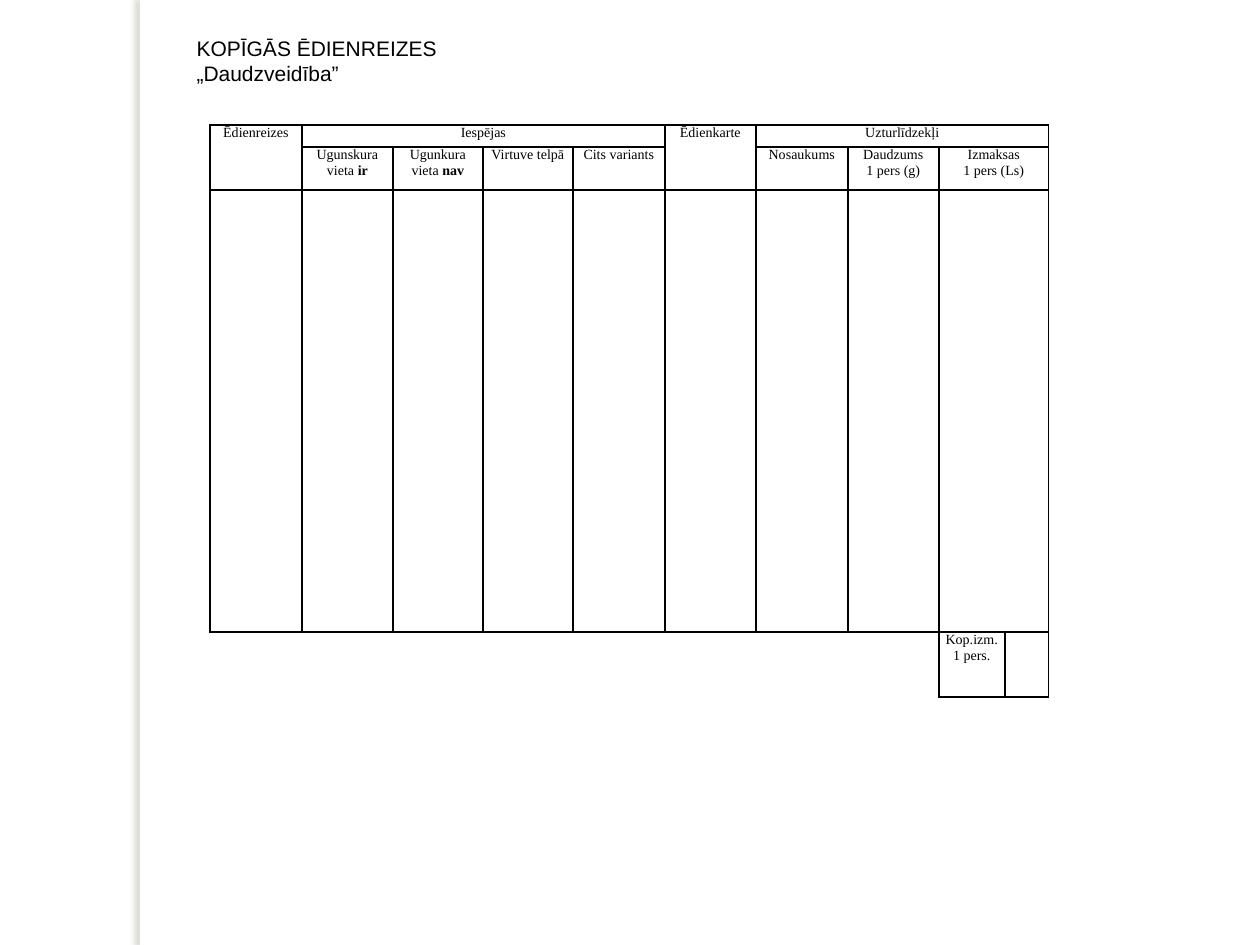
from itertools import product

from lxml import etree
from pptx import Presentation
from pptx.dml.color import RGBColor
from pptx.enum.shapes import MSO_SHAPE
from pptx.enum.text import MSO_ANCHOR, MSO_AUTO_SIZE, PP_ALIGN
from pptx.oxml.ns import qn
from pptx.util import Emu, Pt

RECTANGLE = MSO_SHAPE.RECTANGLE
TOP, NO_FIT = MSO_ANCHOR.TOP, MSO_AUTO_SIZE.NONE
LEFT, CENTER = PP_ALIGN.LEFT, PP_ALIGN.CENTER

PX = 914400 // 126
SLIDE = (1260, 945)
TITLE_AT = (184, 29, 753, 62)
STRIP_AT = (140, 0, 10, 945)
TABLE_AT = (210, 125)
COLUMNS = (92, 91, 90, 90, 92, 91, 92, 91, 66, 44)
ROWS = (22, 43, 442, 65)
CELL_INSET = 6

THEME = {
    "ink": "000000", "paper": "FFFFFF", "shadow": "7E7763",
    "title": {"name": "Arial", "size": Pt(12), "bold": False},
    "cell": {"name": "Times New Roman", "size": Pt(8)},
    "border": Pt(1),
    "no_style": "{2D5ABB26-0587-4C30-8999-92F81FD0307C}",
}

TITLE = ["KOPĪGĀS ĒDIENREIZES", "„Daudzveidība”"]

# row, column, rows spanned, columns spanned, paragraphs of (text, bold) spans
HEADINGS = [
    (0, 0, 2, 1, [[("Ēdienreizes", False)]]),
    (0, 1, 1, 4, [[("Iespējas", False)]]),
    (0, 5, 2, 1, [[("Ēdienkarte", False)]]),
    (0, 6, 1, 4, [[("Uzturlīdzekļi", False)]]),
    (1, 1, 1, 1, [[("Ugunskura vieta ", False), ("ir", True)]]),
    (1, 2, 1, 1, [[("Ugunkura vieta ", False), ("nav", True)]]),
    (1, 3, 1, 1, [[("Virtuve telpā", False)]]),
    (1, 4, 1, 1, [[("Cits variants", False)]]),
    (1, 6, 1, 1, [[("Nosaukums", False)]]),
    (1, 7, 1, 1, [[("Daudzums", False)], [("1 pers (g)", False)]]),
    (1, 8, 1, 2, [[("Izmaksas", False)], [("1 pers (Ls)", False)]]),
]
BODY = [(2, column, 1, 1, []) for column in range(8)] + [(2, 8, 1, 2, [])]
TOTAL = [
    (3, 8, 1, 1, [[("Kop.izm.", False)], [("1 pers.", False)]]),
    (3, 9, 1, 1, []),
]


def px(*lengths):
    return [Emu(length * PX) for length in lengths]


def apply(target, values):
    for name, value in values.items():
        setattr(target, name, value)


def add_span(para, text, font):
    span = para.add_run()
    span.text = text
    apply(span.font, font)
    span.font.color.rgb = RGBColor.from_string(THEME["ink"])


def set_borders(cell, sides):
    """Draw the sides, given in the order L, R, T, B, ahead of the cell's fill."""
    properties = cell._tc.get_or_add_tcPr()
    for place, side in enumerate(sides):
        line = etree.Element(qn(f"a:ln{side}"), w=str(THEME["border"]))
        fill = etree.SubElement(line, qn("a:solidFill"))
        etree.SubElement(fill, qn("a:srgbClr"), val=THEME["ink"])
        properties.insert(place, line)


def add_title(slide):
    title = slide.shapes.title
    apply(title, dict(zip(("left", "top", "width", "height"), px(*TITLE_AT))))
    frame = title.text_frame
    apply(frame, {"vertical_anchor": TOP, "auto_size": NO_FIT, "word_wrap": True})
    for number, text in enumerate(TITLE):
        para = frame.add_paragraph() if number else frame.paragraphs[0]
        para.alignment = LEFT
        add_span(para, text, THEME["title"])


def add_strip(slide):
    """White strip whose soft shadow falls to the left."""
    strip = slide.shapes.add_shape(RECTANGLE, *px(*STRIP_AT))
    strip.fill.solid()
    strip.fill.fore_color.rgb = RGBColor.from_string(THEME["paper"])
    strip.line.fill.background()
    strip.shadow.inherit = False
    effects = strip._element.spPr.find(qn("a:effectLst"))
    shadow = etree.SubElement(effects, qn("a:outerShdw"), blurRad=str(Pt(3)),
                              dist=str(Pt(3)), dir="10800000", rotWithShape="0")
    color = etree.SubElement(shadow, qn("a:srgbClr"), val=THEME["shadow"])
    etree.SubElement(color, qn("a:alpha"), val="25000")


def fill_block(table, row, column, row_span, column_span, paragraphs):
    bottom, right = row + row_span - 1, column + column_span - 1
    origin = table.cell(row, column)
    if (bottom, right) != (row, column):
        origin.merge(table.cell(bottom, right))
    for r, c in product(range(row, bottom + 1), range(column, right + 1)):
        edges = {"L": c == column, "R": c == right, "T": r == row, "B": r == bottom}
        is_origin = (r, c) == (row, column)
        set_borders(table.cell(r, c), [s for s in edges if edges[s] or is_origin])
    for number, spans in enumerate(paragraphs):
        frame = origin.text_frame
        para = frame.add_paragraph() if number else frame.paragraphs[0]
        para.alignment = CENTER
        for text, bold in spans:
            add_span(para, text, {**THEME["cell"], "bold": bold})


def add_meal_table(slide):
    shape = slide.shapes.add_table(len(ROWS), len(COLUMNS),
                                   *px(*TABLE_AT, sum(COLUMNS), sum(ROWS)))
    table = shape.table
    apply(table, {"first_row": False, "horz_banding": False})
    table._tbl.tblPr.find(qn("a:tableStyleId")).text = THEME["no_style"]
    for column, width in zip(table.columns, px(*COLUMNS)):
        column.width = width
    for row, height in zip(table.rows, px(*ROWS)):
        row.height = height
    side, = px(CELL_INSET)
    for cell in table.iter_cells():
        apply(cell, {"margin_left": side, "margin_right": side,
                     "margin_top": 0, "margin_bottom": 0})
        cell.fill.background()
        etree.SubElement(cell.text_frame.paragraphs[0]._p, qn("a:endParaRPr"),
                         sz=str(int(THEME["cell"]["size"].pt * 100)))
    for block in HEADINGS + BODY + TOTAL:
        fill_block(table, *block)


def main():
    deck = Presentation()
    deck.slide_width, deck.slide_height = px(*SLIDE)
    slide = deck.slides.add_slide(deck.slide_layouts[5])
    add_strip(slide)
    add_meal_table(slide)
    add_title(slide)
    deck.save("out.pptx")


if __name__ == "__main__":
    main()
